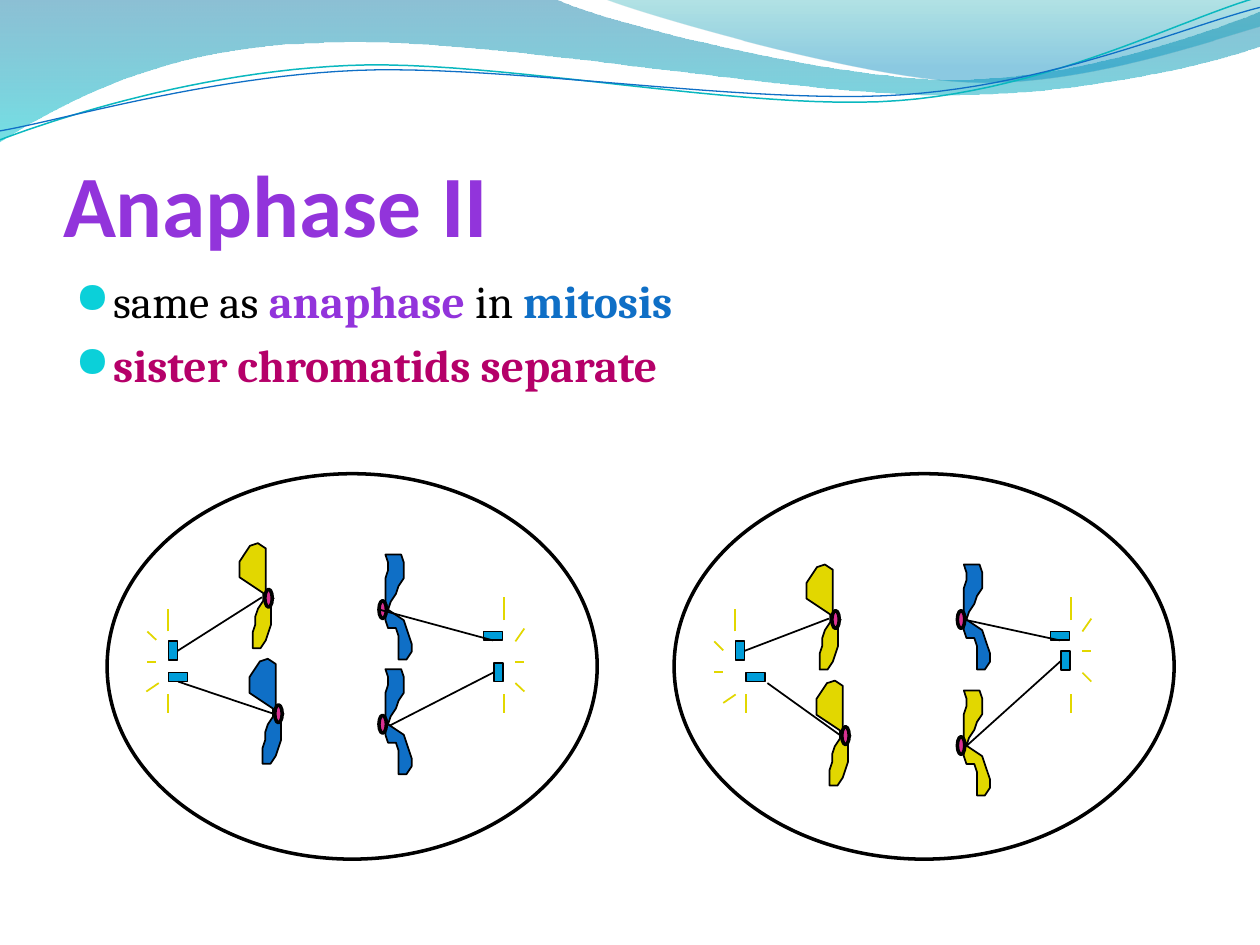
from lxml.etree import SubElement
from pptx import Presentation
from pptx.dml.color import RGBColor
from pptx.enum.shapes import MSO_CONNECTOR, MSO_SHAPE
from pptx.enum.text import MSO_ANCHOR, MSO_AUTO_SIZE, PP_ALIGN
from pptx.oxml.ns import qn
from pptx.util import Cm, Pt

COLORS = {
    "black": "000000", "purple": "9234DB", "blue": "0F6FC6", "magenta": "B50069",
    "bullet": "0BD0D9", "yellow": "E2D700", "centriole": "009DD9", "kinetochore": "D93192",
    "teal line": "0AB8BF", "deep blue": "0074A1", "aqua": "00C6CF",
    "sea green": "00A1A9", "sky": "008BBF",
}
RGB = {name: RGBColor.from_string(value) for name, value in COLORS.items()}
STEPS = 24  # straight pieces per curve
GRID = Cm(2.54) / 48  # unit of the chromatid outlines


def paint(shape, fill, width, line="black"):
    """Give a shape a solid fill, or none, and an outline without shadow."""
    shape.shadow.inherit = False
    if fill:
        shape.fill.solid()
        shape.fill.fore_color.rgb = RGB[fill]
    else:
        shape.fill.background()
    shape.line.color.rgb = RGB[line]
    shape.line.width = Pt(width)


def add_line(x1, y1, x2, y2, color):
    line = shapes.add_connector(MSO_CONNECTOR.STRAIGHT, Cm(x1), Cm(y1), Cm(x2), Cm(y2))
    line.line.color.rgb = RGB[color]
    line.line.width = Pt(1)
    SubElement(line.element.spPr, qn("a:effectLst"))
    return line


deck = Presentation()
deck.slide_width, deck.slide_height = Cm(25.4), Cm(19.05)
page = deck.slides.add_slide(deck.slide_layouts[5])
shapes = page.shapes

# Header waves: a start, then segments of one point (straight) or three (curve),
# and either two gradient stops (colour, position, opacity) or a line
bands = [
    ((0, 0), [
        [(11.18, -0.03)],
        [(12.09, 0.43), (16.87, 1.6), (19.25, 1.6)],
        [(21.67, 1.6), (24.33, 0.66), (25.4, 0.23)],
        [(25.43, 0.91)],
        [(24.97, 1.12), (22.1, 1.93), (18.95, 1.91)],
        [(15.8, 1.91), (9.7, 0.71), (6.53, 0.86)],
        [(3.28, 0.91), (1.17, 2.11), (-0.03, 2.87)],
    ], [("deep blue", 0, 45), ("aqua", 1, 55)], None),
    ((12.17, -0.03), [
        [(12.93, 0.28), (17.32, 1.57), (19.53, 1.65)],
        [(21.74, 1.75), (24.41, 0.81), (25.4, 0.53)],
        [(25.4, 0)],
    ], [("sea green", 0, 30), ("sky", 0.8, 45)], None),
    ((0, 2.82), [
        [(1.22, 2.36), (4.01, 1.45), (7.04, 1.32)],
        [(10.03, 1.19), (15.06, 2.26), (18.11, 2.03)],
        [(21.16, 1.8), (23.83, 0.38), (25.35, -0.05)],
    ], None, ("teal line", 0.85)),
    ((0, 2.64), [
        [(1.19, 2.44), (4.17, 1.55), (7.19, 1.42)],
        [(10.24, 1.3), (15.16, 2.13), (18.21, 1.91)],
        [(21.23, 1.7), (23.9, 0.53), (25.4, 0.15)],
    ], None, ("blue", 0.75)),
]
for start, segments, stops, stroke in bands:
    points = [start]
    for segment in segments:
        if len(segment) == 1:
            points += segment
            continue
        curve = [points[-1], *segment]
        for step in range(1, STEPS + 1):
            t = step / STEPS
            weights = ((1 - t) ** 3, 3 * t * (1 - t) ** 2, 3 * t * t * (1 - t), t ** 3)
            points.append(tuple(sum(w * p[axis] for w, p in zip(weights, curve))
                                for axis in (0, 1)))
    points = [(Cm(x), Cm(y)) for x, y in points]
    builder = shapes.build_freeform(*points[0])
    builder.add_line_segments(points[1:], close=stops is not None)
    wave = builder.convert_to_shape()
    if stroke:
        paint(wave, None, stroke[1], stroke[0])
        continue
    wave.shadow.inherit = False
    wave.line.fill.background()
    wave.fill.gradient()
    wave.fill.gradient_angle = 270
    for stop, (color, position, _) in zip(wave.fill.gradient_stops, stops):
        stop.color.rgb = RGB[color]
        stop.position = position
    for node, (_, _, opacity) in zip(wave.element.spPr.iter(qn("a:srgbClr")), stops):
        SubElement(node, qn("a:alpha"), val=str(opacity * 1000))

# Title
title = shapes.title
title.left, title.top, title.width, title.height = Cm(1.27), Cm(1.96), Cm(22.86), Cm(3.18)
frame = title.text_frame
frame.text = "Anaphase II"
frame.auto_size = MSO_AUTO_SIZE.NONE
frame.vertical_anchor = MSO_ANCHOR.BOTTOM
frame.margin_left = frame.margin_right = frame.margin_bottom = 0
para = frame.paragraphs[0]
para.alignment = PP_ALIGN.LEFT
font = para.font
font.name, font.size, font.bold, font.color.rgb = "Calibri", Pt(50), True, RGB["purple"]

# Bullets
bullets = [
    [("same as ", "black"), ("anaphase", "purple"), (" in ", "black"), ("mitosis", "blue")],
    [("sister chromatids separate", "magenta")],
]
box = shapes.add_textbox(Cm(1.27), Cm(5.38), Cm(22.86), Cm(12.19))
frame = box.text_frame
frame.word_wrap = True
for index, spans in enumerate(bullets):
    para = frame.add_paragraph() if index else frame.paragraphs[0]
    para.space_before = Pt(5.2 if index else 0)
    props = para._p.get_or_add_pPr()
    props.set("marL", str(Cm(0.76)))
    props.set("indent", str(Cm(-0.76)))
    SubElement(SubElement(props, qn("a:buClr")), qn("a:srgbClr"), val=COLORS["bullet"])
    SubElement(props, qn("a:buSzPct"), val="95000")
    SubElement(props, qn("a:buChar"), char="●")
    para.font.name, para.font.size = "Cambria", Pt(26)
    for text, color in spans:
        span = para.add_run()
        span.text = text
        span.font.bold = color != "black"
        span.font.color.rgb = RGB[color]

# Chromatids: outline, kinetochore offset, then a place and colour for each
left_outline = [
    (13, 21), (10, 20), (10, 2), (7, 0), (4, 1), (2, 4), (0, 7), (0, 13), (9, 19), (9, 22),
    (7, 25), (6, 28), (6, 31), (5, 34), (5, 40), (8, 40), (10, 37), (12, 31), (12, 22)]
right_outline = [
    (1, 21), (0, 18), (0, 9), (1, 6), (1, 3), (0, 0), (6, 0), (7, 3), (7, 9), (5, 12), (4, 15),
    (2, 18), (1, 21), (7, 25), (10, 34), (10, 37), (8, 40), (5, 40), (5, 31), (4, 28), (1, 28),
    (0, 25), (0, 22)]
chromatids = [
    (left_outline, 0.51, [(4.83, 10.95, "yellow"), (5.03, 13.28, "blue"),
                          (16.26, 11.38, "yellow"), (16.46, 13.72, "yellow")]),
    (right_outline, -0.13, [(7.77, 11.18, "blue"), (7.77, 13.49, "blue"),
                            (19.43, 11.38, "blue"), (19.43, 13.92, "yellow")]),
]
for outline, offset, places in chromatids:
    for x, y, color in places:
        builder = shapes.build_freeform(*outline[0], scale=GRID)
        builder.add_line_segments(outline[1:])
        paint(builder.convert_to_shape(Cm(x), Cm(y)), color, 1)
        kinetochore = shapes.add_shape(
            MSO_SHAPE.OVAL, Cm(x + offset), Cm(y + 0.93), Cm(0.15), Cm(0.36))
        paint(kinetochore, "kinetochore", 2)

# Cell outlines
for x, width in ((2.16, 9.88), (13.59, 10.08)):
    paint(shapes.add_shape(MSO_SHAPE.OVAL, Cm(x), Cm(9.55), Cm(width), Cm(7.77)), None, 2)

# Aster rays: upper x and y, lower x, then the side rays
asters = [
    (3.38, 12.27, 3.38, [(3.2, 13.77, 2.95, 13.94), (2.97, 13.34, 3.15, 13.34),
                         (2.97, 12.73, 3.15, 12.9)]),
    (10.16, 12.04, 10.16, [(10.39, 12.93, 10.57, 12.67), (10.39, 13.34, 10.57, 13.34),
                           (10.39, 13.77, 10.57, 13.94)]),
    (14.81, 12.27, 15.04, [(14.83, 14, 14.58, 14.17), (14.4, 13.54, 14.58, 13.54),
                           (14.4, 12.93, 14.58, 13.11)]),
    (21.59, 12.04, 21.59, [(21.82, 12.73, 22, 12.47), (21.82, 13.13, 22, 13.13),
                           (21.82, 13.56, 22, 13.74)]),
]
for upper_x, upper_y, lower_x, side_rays in asters:
    for ray in [(upper_x, upper_y + 0.46, upper_x, upper_y),
                (lower_x, 14, lower_x, 14.38), *side_rays]:
        add_line(*ray, "yellow")

# Centrioles, each with its spindle fibre: place, upright, joined side, fibre ends
centrioles = [
    (3.4, 12.93, True, 3, (3.58, 13.12, 5.28, 12.04)),
    (3.4, 13.56, False, 2, (3.59, 13.74, 5.49, 14.38)),
    (9.75, 12.73, False, 2, (9.94, 12.91, 7.65, 12.29)),
    (9.96, 13.36, True, 1, (9.96, 13.55, 7.85, 14.63)),
    (14.83, 12.93, True, 3, (15.01, 13.12, 16.71, 12.47)),
    (15.04, 13.56, False, None, (15.47, 13.77, 16.92, 14.81)),
    (21.18, 12.73, False, 2, (21.37, 12.91, 19.48, 12.5)),
    (21.39, 13.13, True, 1, (21.39, 13.32, 19.48, 15.04)),
]
for x, y, upright, side, ends in centrioles:
    width, height = (0.18, 0.38) if upright else (0.38, 0.18)
    centriole = shapes.add_shape(MSO_SHAPE.RECTANGLE, Cm(x), Cm(y), Cm(width), Cm(height))
    paint(centriole, "centriole", 1)
    fibre = add_line(*ends, "black")
    if side is not None:
        fibre.begin_connect(centriole, side)

deck.save("out.pptx")
